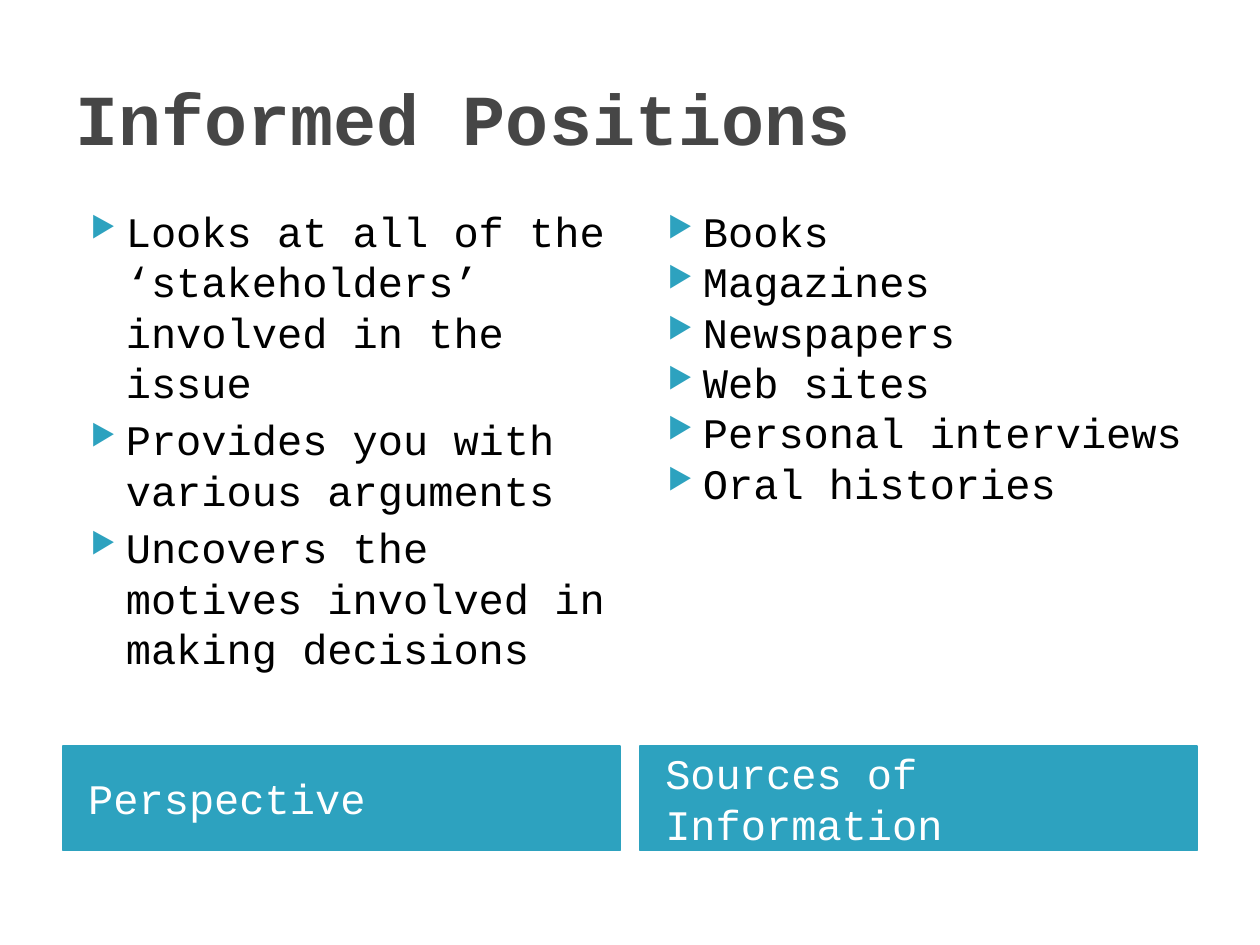
"""Build the Informed Positions slide with two captioned bullet columns."""
from dataclasses import dataclass

from lxml import etree
from pptx import Presentation
from pptx.dml.color import RGBColor
from pptx.enum.shapes import MSO_SHAPE
from pptx.enum.text import MSO_ANCHOR, PP_ALIGN
from pptx.oxml.ns import qn
from pptx.util import Inches, Pt

RECT = MSO_SHAPE.RECTANGLE
MIDDLE = MSO_ANCHOR.MIDDLE
LEFT = PP_ALIGN.LEFT
FONT = "Courier New"
TEAL = "2DA2BF"
COLUMN_WIDTH = 4.42


@dataclass
class Column:
    left: float
    caption: str
    items: list[str]
    gap: float


COLUMNS = [
    Column(0.5, "Perspective", [
        "Looks at all of the ‘stakeholders’ involved in the issue",
        "Provides you with various arguments",
        "Uncovers the motives involved in making decisions",
    ], 4),
    Column(5.08, "Sources of Information", [
        "Books", "Magazines", "Newspapers",
        "Web sites", "Personal interviews", "Oral histories",
    ], 0),
]


def rgb(color: str) -> RGBColor:
    return RGBColor.from_string(color)


def style(p, size: float, color: str, bold: bool = False) -> None:
    p.alignment = LEFT
    for r in p.runs:
        r.font.name = FONT
        r.font.size = Pt(size)
        r.font.bold = bold
        r.font.color.rgb = rgb(color)


def add_bullet(p) -> None:
    pPr = p._p.get_or_add_pPr()
    pPr.set("marL", str(Inches(0.4)))
    pPr.set("indent", str(Inches(-0.28)))
    clr = etree.SubElement(pPr, qn("a:buClr"))
    etree.SubElement(clr, qn("a:srgbClr"), val=TEAL)
    etree.SubElement(pPr, qn("a:buSzPct"), val="68000")
    etree.SubElement(pPr, qn("a:buChar"), char="▶")


def add_title(s, text: str) -> None:
    sp = s.shapes.title
    sp.left, sp.top = Inches(0.5), Inches(0.3)
    sp.width, sp.height = Inches(9), Inches(1.25)
    tf = sp.text_frame
    tf.text = text
    tf.vertical_anchor = MIDDLE
    style(tf.paragraphs[0], 41, "464646", True)


def add_caption(s, column: Column) -> None:
    sp = s.shapes.add_shape(RECT, Inches(column.left), Inches(5.92),
                            Inches(COLUMN_WIDTH), Inches(0.83))
    sp.shadow.inherit = False
    sp.fill.solid()
    sp.fill.fore_color.rgb = rgb(TEAL)
    sp.line.color.rgb = rgb(TEAL)
    sp.line.width = Pt(0.75)
    tf = sp.text_frame
    tf.text = column.caption
    tf.word_wrap = True
    tf.vertical_anchor = MIDDLE
    tf.margin_left = Inches(0.2)
    style(tf.paragraphs[0], 24, "FFFFFF")


def add_list(s, column: Column) -> None:
    sp = s.shapes.add_textbox(Inches(column.left), Inches(1.58),
                              Inches(COLUMN_WIDTH), Inches(4.31))
    tf = sp.text_frame
    tf.text = "\n".join(column.items)
    tf.word_wrap = True
    for i, p in enumerate(tf.paragraphs):
        add_bullet(p)
        p.space_before = Pt(column.gap if i else 0)
        style(p, 24, "000000")


def main() -> None:
    prs = Presentation()
    prs.slide_width, prs.slide_height = Inches(10), Inches(7.5)
    s = prs.slides.add_slide(prs.slide_layouts[5])
    add_title(s, "Informed Positions")
    for column in COLUMNS:
        add_caption(s, column)
        add_list(s, column)
    prs.save("out.pptx")


if __name__ == "__main__":
    main()
